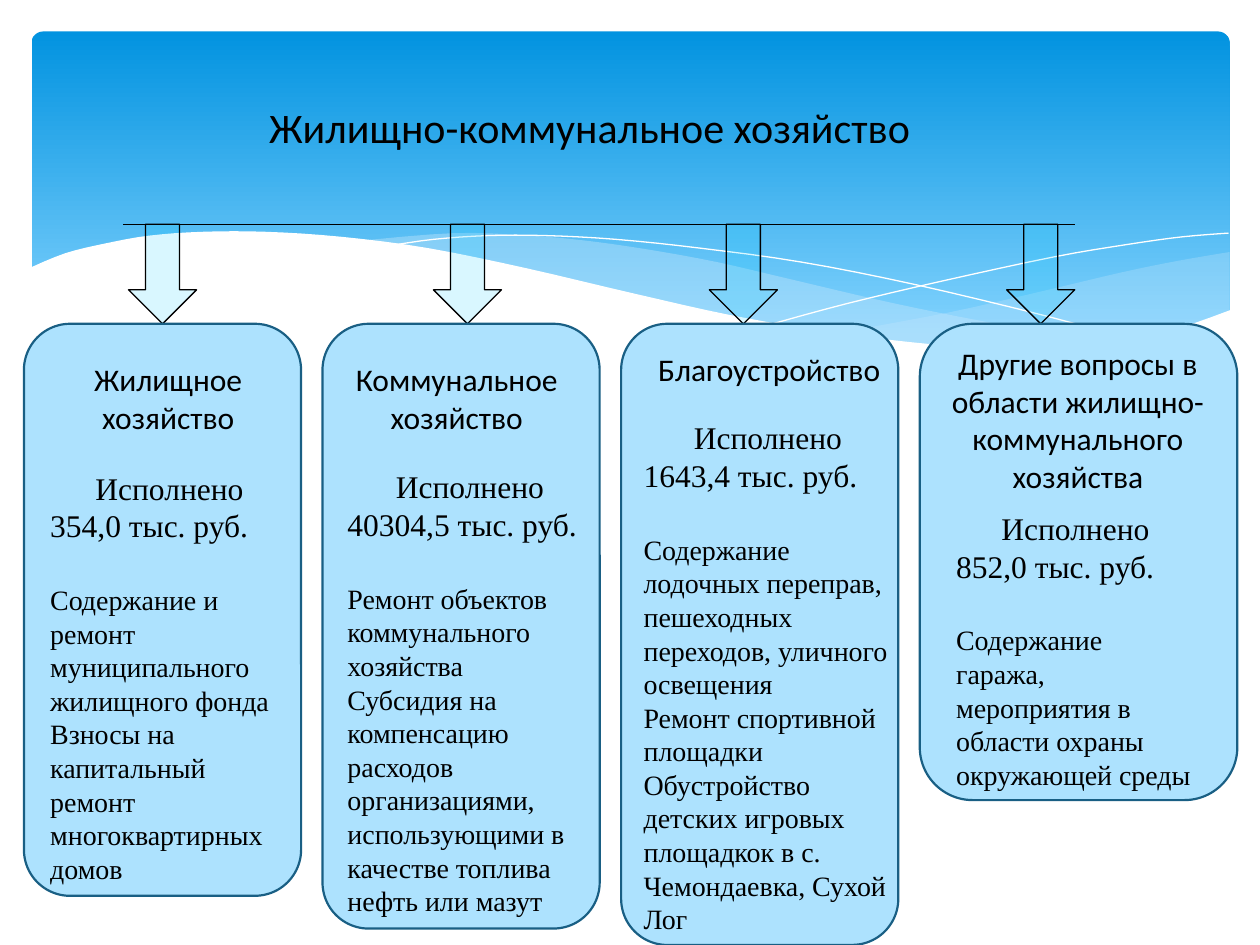
from lxml.etree import SubElement
from pptx import Presentation
from pptx.dml.color import RGBColor
from pptx.enum.shapes import MSO_CONNECTOR as Link, MSO_SHAPE as Preset
from pptx.enum.text import MSO_AUTO_SIZE as AutoSize, PP_ALIGN as Align
from pptx.oxml.ns import qn
from pptx.util import Inches, Pt

COLORS = {"panel_top": "0293E0", "panel_end": "83D3FE", "wave": "C6E7FC",
          "white": "FFFFFF", "arrow": "00CCFF", "card": "ADE2FE",
          "edge": "195F84", "black": "000000"}
TITLE = "Жилищно-коммунальное хозяйство"
DONE = "Исполнено"

CARDS = [
    {"width": 2.2, "height": 4.54, "arrow": 1.02,
     "head_at": (0.43, 2.81, 1.81, 0.71), "head": ["Жилищное хозяйство"],
     "body_at": (0.3, 3.67, 2.09, 3.43), "sum": "354,0 тыс. руб.",
     "body": ["Содержание и ремонт муниципального жилищного фонда",
              "Взносы на капитальный ремонт многоквартирных домов"]},
    {"width": 2.2, "height": 4.8, "arrow": 3.44,
     "head_at": (2.64, 2.81, 1.97, 0.71), "head": ["Коммунальное хозяйство"],
     "body_at": (2.66, 3.66, 2.14, 3.7), "sum": "40304,5 тыс. руб.",
     "body": ["Ремонт объектов коммунального хозяйства\vСубсидия на компенсацию",
              "расходов организациями,",
              "использующими в качестве топлива", "нефть или мазут"]},
    {"width": 2.2, "height": 4.93, "arrow": 5.63,
     "head_at": (5.06, 2.73, 2.09, 0.4), "head": ["Благоустройство"],
     "body_at": (5.01, 3.27, 2.17, 4.24), "sum": "1643,4 тыс. руб.",
     "body": ["Содержание лодочных переправ, пешеходных переходов, уличного освещения",
              "Ремонт спортивной площадки",
              "Обустройство детских игровых площадкок в с. Чемондаевка, Сухой Лог"]},
    {"width": 2.52, "height": 3.78, "arrow": 7.99,
     "head_at": (7.31, 2.68, 2.49, 1.31),
     "head": ["Другие вопросы в", "области жилищно-коммунального", "хозяйства"],
     "body_at": (7.49, 3.99, 2.09, 2.36), "sum": "852,0 тыс. руб.",
     "body": ["Содержание гаража, мероприятия в области охраны окружающей среды"]},
]
CARD_LEFT, CARD_STEP, CARD_TOP = 0.19, 2.37, 2.57
ARROW_TOP, ARROW_WIDTH = 1.78, 0.54

RIGHT_WAVE = [
    [(9.76, 2), (9.35, 2.07), (8.91, 2.16), (8.32, 2.3), (7.53, 2.48), (6.61, 2.65)],
    [(6.61, 2.65), (7.05, 2.71), (7.57, 2.76), (8.14, 2.78), (8.63, 2.75),
     (9.13, 2.67), (9.49, 2.57), (9.76, 2.47)]]
MIDDLE_WAVE = [
    [(8.93, 2.73), (8.37, 2.65), (7.75, 2.54), (7.06, 2.4), (6.29, 2.22), (5.69, 2.08),
     (5.14, 1.98), (4.65, 1.91), (4.2, 1.87), (3.61, 1.85), (2.86, 1.91)],
    [(2.86, 1.91), (3.62, 2.03), (4.49, 2.22), (5.3, 2.4), (6.01, 2.55), (6.65, 2.66),
     (7.22, 2.74), (7.73, 2.77), (8.18, 2.78), (8.57, 2.77), (8.93, 2.73)]]
FALLING_LINE = [
    [(3.09, 1.95), (3.44, 1.9), (3.87, 1.87), (4.33, 1.87), (4.89, 1.9), (5.56, 1.97),
     (6.36, 2.08), (7.27, 2.26), (8.31, 2.51), (9.07, 2.72)]]
RISING_LINE = [
    [(6.13, 2.57), (6.72, 2.41), (7.48, 2.23), (8.36, 2.04), (8.95, 1.94),
     (9.38, 1.88), (9.75, 1.85)]]
WHITE_WAVE = [
    [(9.77, 2.46), (9.4, 2.59), (8.99, 2.69), (8.5, 2.75), (8.09, 2.77), (7.61, 2.75),
     (7.08, 2.7), (6.48, 2.62), (5.79, 2.5), (5.03, 2.33), (4.18, 2.13), (3.4, 1.97),
     (2.71, 1.88), (2.11, 1.84), (1.61, 1.84), (1.19, 1.87), (0.85, 1.93),
     (0.52, 2.01), (0.23, 2.13)],
    [(0.23, 3.29), (9.77, 3.29)]]


def inches(values):
    return [Inches(value) for value in values]


def rgb(name):
    return RGBColor.from_string(COLORS[name])


def paint(shape, fill=None, line=None, width=0, alpha=None):
    shape.shadow.inherit = False
    if fill:
        shape.fill.solid()
        shape.fill.fore_color.rgb = rgb(fill)
        if alpha:
            color = shape.fill._xPr.find(".//" + qn("a:srgbClr"))
            SubElement(color, qn("a:alpha")).set("val", str(alpha * 1000))
    else:
        shape.fill.background()
    if line:
        shape.line.color.rgb = rgb(line)
        shape.line.width = Pt(width)
    else:
        shape.line.fill.background()


def smooth(knots, steps=4):
    ends = [knots[0], *knots, knots[-1]]
    points = [knots[0]]
    for a, b, c, d in zip(ends, ends[1:], ends[2:], ends[3:]):
        for t in (step / steps for step in range(1, steps + 1)):
            points.append(tuple(
                b[k] + (c[k] - a[k]) * t / 2
                + (2 * a[k] - 5 * b[k] + 4 * c[k] - d[k]) * t ** 2 / 2
                + (3 * b[k] - a[k] - 3 * c[k] + d[k]) * t ** 3 / 2 for k in (0, 1)))
    return points


def add_wave(page, edges, closed=True, **look):
    points = [inches(point) for edge in edges for point in smooth(edge)]
    builder = page.shapes.build_freeform(*points[0])
    builder.add_line_segments(points[1:], close=closed)
    paint(builder.convert_to_shape(), **look)


def add_text(page, at, rows, font):
    box = page.shapes.add_textbox(*inches(at))
    frame = box.text_frame
    frame.word_wrap = True
    frame.text = "\n".join(text for text, *_ in rows)
    frame.auto_size = AutoSize.SHAPE_TO_FIT_TEXT
    for para, (_, size, align, gap) in zip(frame.paragraphs, rows):
        para.alignment = align
        para.space_before = Pt(gap)
        for span in para.runs:
            span.font.name = font
            span.font.size = Pt(size)
            span.font.color.rgb = rgb("black")


def add_backdrop(page):
    panel = page.shapes.add_shape(Preset.ROUNDED_RECTANGLE, *inches((0.25, 0.25, 9.51, 2.7)))
    panel.adjustments[0] = 0.034
    paint(panel)
    panel.fill.gradient()
    panel.fill.gradient_angle = 270
    stops = zip(panel.fill.gradient_stops, ("panel_top", "panel_end"), (0, 0.9))
    for stop, name, position in stops:
        stop.color.rgb = rgb(name)
        stop.position = position
    add_wave(page, RIGHT_WAVE, fill="wave", alpha=29)
    add_wave(page, MIDDLE_WAVE, fill="wave", alpha=40)
    add_wave(page, FALLING_LINE, closed=False, line="white")
    add_wave(page, RISING_LINE, closed=False, line="white")
    add_wave(page, WHITE_WAVE, fill="white")


def add_branches(page):
    for card in CARDS:
        at = (card["arrow"], ARROW_TOP, ARROW_WIDTH, CARD_TOP - ARROW_TOP)
        arrow = page.shapes.add_shape(Preset.DOWN_ARROW, *inches(at))
        paint(arrow, fill="arrow", line="black", width=0.75, alpha=15)
    end = CARDS[-1]["arrow"] + ARROW_WIDTH
    rail = page.shapes.add_connector(Link.STRAIGHT, *inches((0.98, ARROW_TOP, end, ARROW_TOP)))
    rail.line.color.rgb = rgb("black")
    rail.line.width = Pt(0.75)
    SubElement(rail._element.spPr, qn("a:effectLst"))


def add_card(page, index, card):
    at = (CARD_LEFT + index * CARD_STEP, CARD_TOP, card["width"], card["height"])
    plate = page.shapes.add_shape(Preset.ROUNDED_RECTANGLE, *inches(at))
    paint(plate, fill="card", line="edge", width=1.25)
    head = [(text, 18, Align.CENTER, 0) for text in card["head"]]
    add_text(page, card["head_at"], head, "Calibri")
    body = [(DONE, 18, Align.CENTER, 0), (card["sum"], 18, Align.LEFT, 0)]
    body += [(text, 16, Align.LEFT, 0 if row else 22) for row, text in enumerate(card["body"])]
    add_text(page, card["body_at"], body, "Times New Roman")


def main():
    deck = Presentation()
    deck.slide_width, deck.slide_height = inches((10, 7.5))
    page = deck.slides.add_slide(deck.slide_layouts[6])
    add_backdrop(page)
    add_text(page, (0.98, 0.76, 7.4, 0.5), [(TITLE, 24, Align.CENTER, 0)], "Calibri")
    add_branches(page)
    for index, card in enumerate(CARDS):
        add_card(page, index, card)
    deck.save("out.pptx")


if __name__ == "__main__":
    main()
